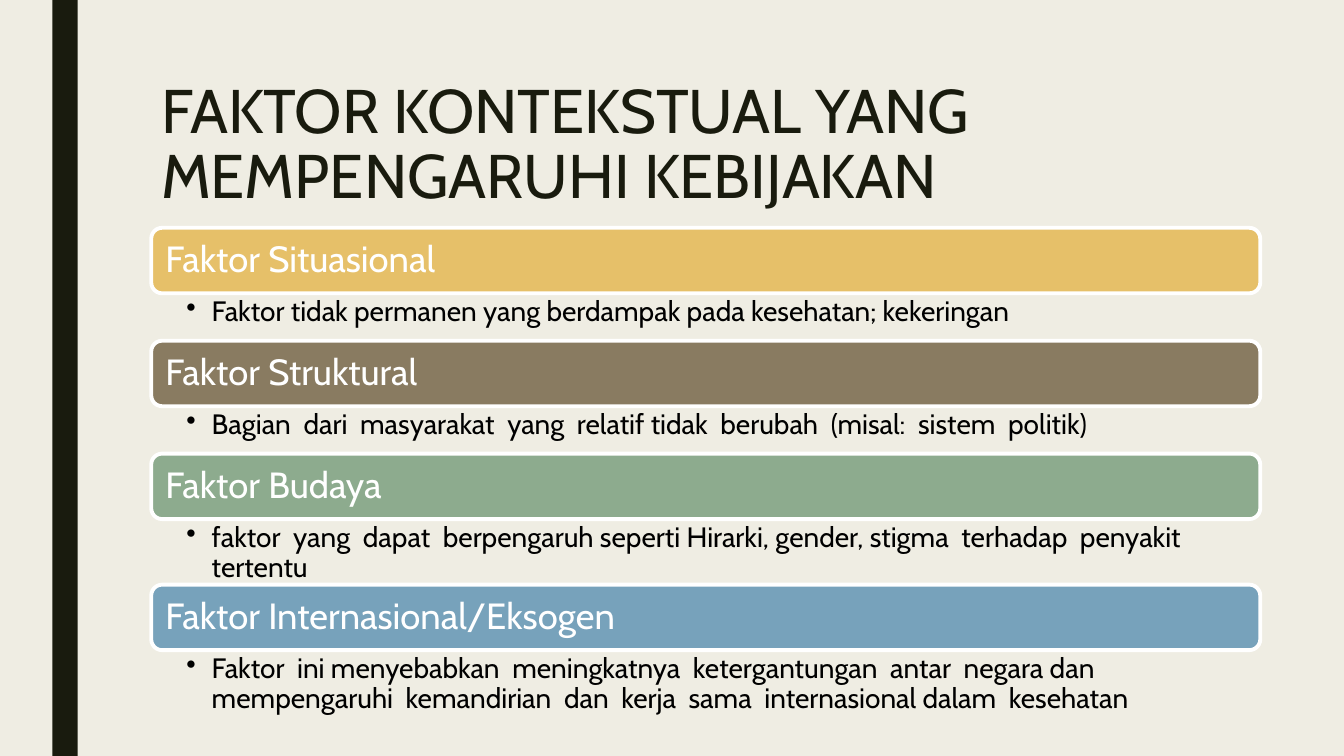
from lxml.etree import SubElement
from pptx import Presentation
from pptx.dml.color import RGBColor
from pptx.enum.shapes import MSO_SHAPE as SHAPE
from pptx.enum.text import MSO_ANCHOR as ANCHOR, PP_ALIGN as ALIGN
from pptx.oxml.ns import qn
from pptx.util import Pt

PX = 9144
FONT = "Cabin"
INK = "191B0E"
FACTORS = [
    ("Faktor Situasional", "E6C069", 47,
     "Faktor tidak permanen yang berdampak pada kesehatan; kekeringan"),
    ("Faktor Struktural", "897B61", 47,
     "Bagian  dari  masyarakat  yang  relatif tidak  berubah  (misal:  sistem  politik)"),
    ("Faktor Budaya", "8DAB8E", 65,
     "faktor  yang  dapat  berpengaruh seperti Hirarki, gender, stigma  terhadap  penyakit  tertentu"),
    ("Faktor Internasional/Eksogen", "77A2BB", 65,
     "Faktor  ini menyebabkan  meningkatnya  ketergantungan  antar  negara dan  "
     "mempengaruhi  kemandirian  dan  kerja  sama  internasional dalam  kesehatan"),
]


def px(n):
    """Turn px into EMU."""
    return n * PX


def rgb(color):
    """Turn a hex string into a colour."""
    return RGBColor.from_string(color)


def add_box(s, kind, box, fill, line=None):
    """Add a filled preset shape without shadow."""
    sp = s.shapes.add_shape(kind, *map(px, box))
    sp.shadow.inherit = False
    sp.fill.solid()
    sp.fill.fore_color.rgb = rgb(fill)
    if line:
        sp.line.color.rgb = rgb(line)
        sp.line.width = Pt(2.75)
    else:
        sp.line.fill.background()
    return sp


def write(sp, text, size, color, insets, anchor=ANCHOR.TOP, spacing=0.9):
    """Write one left-aligned paragraph in a shape and return it."""
    tf = sp.text_frame
    names = ("margin_left", "margin_top", "margin_right", "margin_bottom")
    formats = dict(zip(names, map(px, insets)), word_wrap=True, vertical_anchor=anchor)
    for name, value in formats.items():
        setattr(tf, name, value)
    p = tf.paragraphs[0]
    p.alignment, p.line_spacing = ALIGN.LEFT, spacing
    r = p.add_run()
    r.text = text
    for name, value in {"name": FONT, "size": Pt(size)}.items():
        setattr(r.font, name, value)
    r.font.color.rgb = rgb(color)
    return p


def add_bullet(p, indent):
    """Give a paragraph a round bullet and a hanging indent."""
    pPr = p._p.get_or_add_pPr()
    pPr.set("marL", str(px(indent)))
    pPr.set("indent", str(-px(indent)))
    SubElement(pPr, qn("a:buChar"), char="•")


def add_title(s, box, text):
    """Add the slide title."""
    sp = s.shapes.add_textbox(*map(px, box))
    write(sp, text, 44, INK, (10, 5, 10, 5), spacing=0.89)


def add_factor(s, box, name, fill, detail, bar_h=65):
    """Add a coloured heading bar with its bulleted detail below."""
    x, y, w, h = box
    bar = add_box(s, SHAPE.ROUNDED_RECTANGLE, (x, y, w, bar_h), fill, "FFFFFF")
    write(bar, name, 26, "FFFFFF", (11, 11, 11, 11), ANCHOR.MIDDLE)
    body = s.shapes.add_textbox(*map(px, (x, y + bar_h, w, h - bar_h)))
    p = write(body, detail, 20, "000000", (35, 4, 20, 4))
    add_bullet(p, 25)


def add_factors(s, x, y, w):
    """Stack the factors from the given top-left corner."""
    for name, fill, detail_h, detail in FACTORS:
        h = 65 + detail_h
        add_factor(s, (x, y, w, h), name, fill, detail)
        y += h


def main():
    """Build and save the slide."""
    prs = Presentation()
    prs.slide_width, prs.slide_height = px(1333), px(750)
    s = prs.slides.add_slide(prs.slide_layouts[6])
    s.background.fill.solid()
    s.background.fill.fore_color.rgb = rgb("EFEDE3")
    add_box(s, SHAPE.RECTANGLE, (52, 0, 25, 750), INK)
    add_title(s, (150, 75, 1050, 162), "FAKTOR KONTEKSTUAL YANG MEMPENGARUHI KEBIJAKAN")
    add_factors(s, 150, 226, 1100)
    prs.save("out.pptx")


if __name__ == "__main__":
    main()
